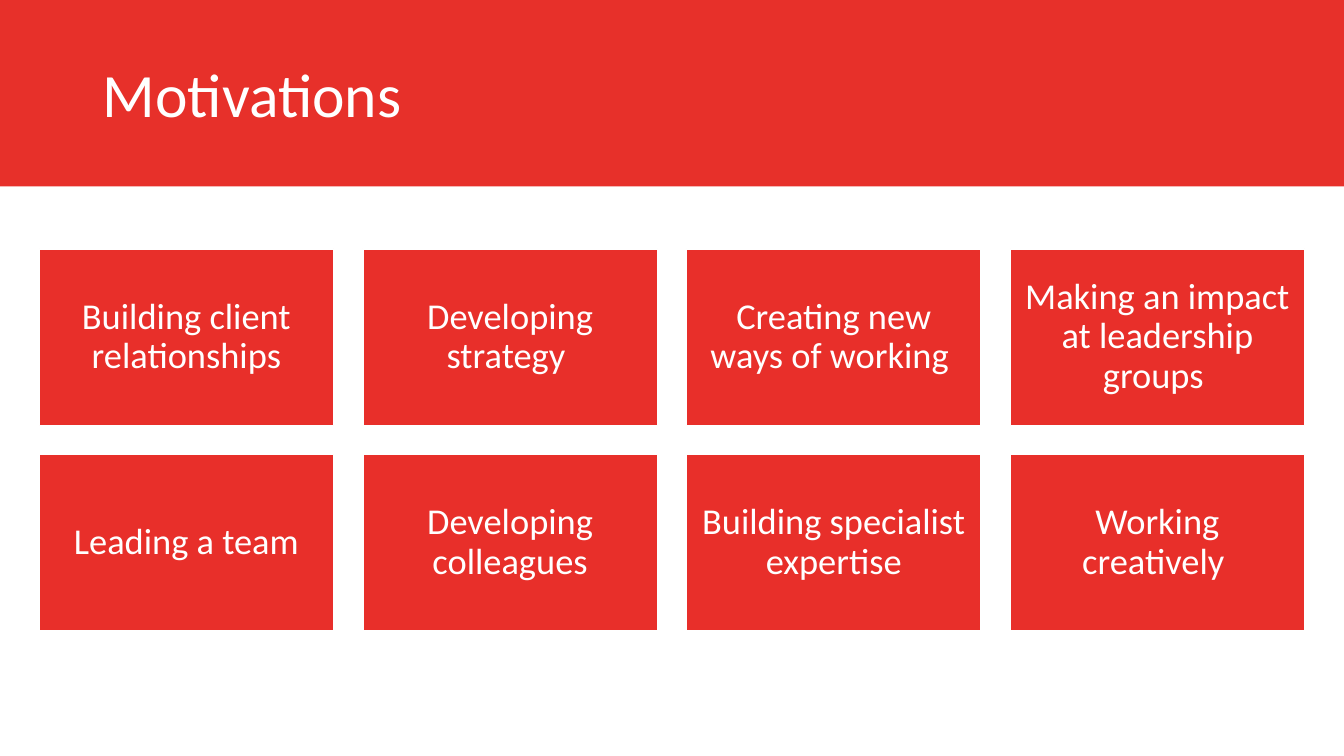
from pptx import Presentation
from pptx.dml.color import RGBColor
from pptx.enum.shapes import MSO_SHAPE
from pptx.enum.text import MSO_ANCHOR, PP_ALIGN
from pptx.util import Inches, Pt

TITLE = "Motivations"
MOTIVATIONS = [
    ["Building client relationships", "Developing strategy ",
     "Creating new ways of working ", "Making an impact at leadership groups "],
    ["Leading a team", "Developing colleagues",
     "Building specialist expertise", "Working creatively "],
]

BAND_RED = RGBColor(0xE7, 0x30, 0x2A)
CARD_RED = RGBColor(0xE8, 0x2F, 0x2A)
WHITE = RGBColor(0xFF, 0xFF, 0xFF)

SLIDE_W, SLIDE_H = 13.33, 7.5
BAND_H = 1.85
CARD_W, CARD_H = 2.92, 1.75
GAP = 0.29
COLS = len(MOTIVATIONS[0])
GRID_LEFT = (SLIDE_W - COLS * CARD_W - (COLS - 1) * GAP) / 2
GRID_TOP = 2.47


def add_box(s, left, top, width, height, fill):
    box = s.shapes.add_shape(MSO_SHAPE.RECTANGLE, Inches(left), Inches(top),
                             Inches(width), Inches(height))
    box.shadow.inherit = False
    box.fill.solid()
    box.fill.fore_color.rgb = fill
    box.line.fill.background()
    return box


def write(shape, text, size, align, margins):
    tf = shape.text_frame
    tf.text = text
    frame_format = {"word_wrap": True, "vertical_anchor": MSO_ANCHOR.MIDDLE, **margins}
    for name, value in frame_format.items():
        setattr(tf, name, value)
    p = tf.paragraphs[0]
    p.alignment = align
    p.line_spacing = 0.9
    r = p.runs[0]
    for name, value in {"name": "Calibri", "size": Pt(size)}.items():
        setattr(r.font, name, value)
    r.font.color.rgb = WHITE


prs = Presentation()
prs.slide_width, prs.slide_height = Inches(SLIDE_W), Inches(SLIDE_H)
s = prs.slides.add_slide(prs.slide_layouts[5])

title = s.shapes.title
band = add_box(s, 0, 0, SLIDE_W, BAND_H, BAND_RED)
title._element.addprevious(band._element)
for side, value in {"left": 0.92, "top": 0.35, "width": 11.5, "height": 1.24}.items():
    setattr(title, side, Inches(value))
write(title, TITLE, 44, PP_ALIGN.LEFT, {})

card_margins = {f"margin_{side}": Inches(0.11)
                for side in ("left", "top", "right", "bottom")}
for row, labels in enumerate(MOTIVATIONS):
    for col, label in enumerate(labels):
        card = add_box(s, GRID_LEFT + col * (CARD_W + GAP),
                       GRID_TOP + row * (CARD_H + GAP), CARD_W, CARD_H, CARD_RED)
        card.line.color.rgb = WHITE
        card.line.width = Pt(1)
        write(card, label, 26, PP_ALIGN.CENTER, card_margins)

prs.save("out.pptx")
